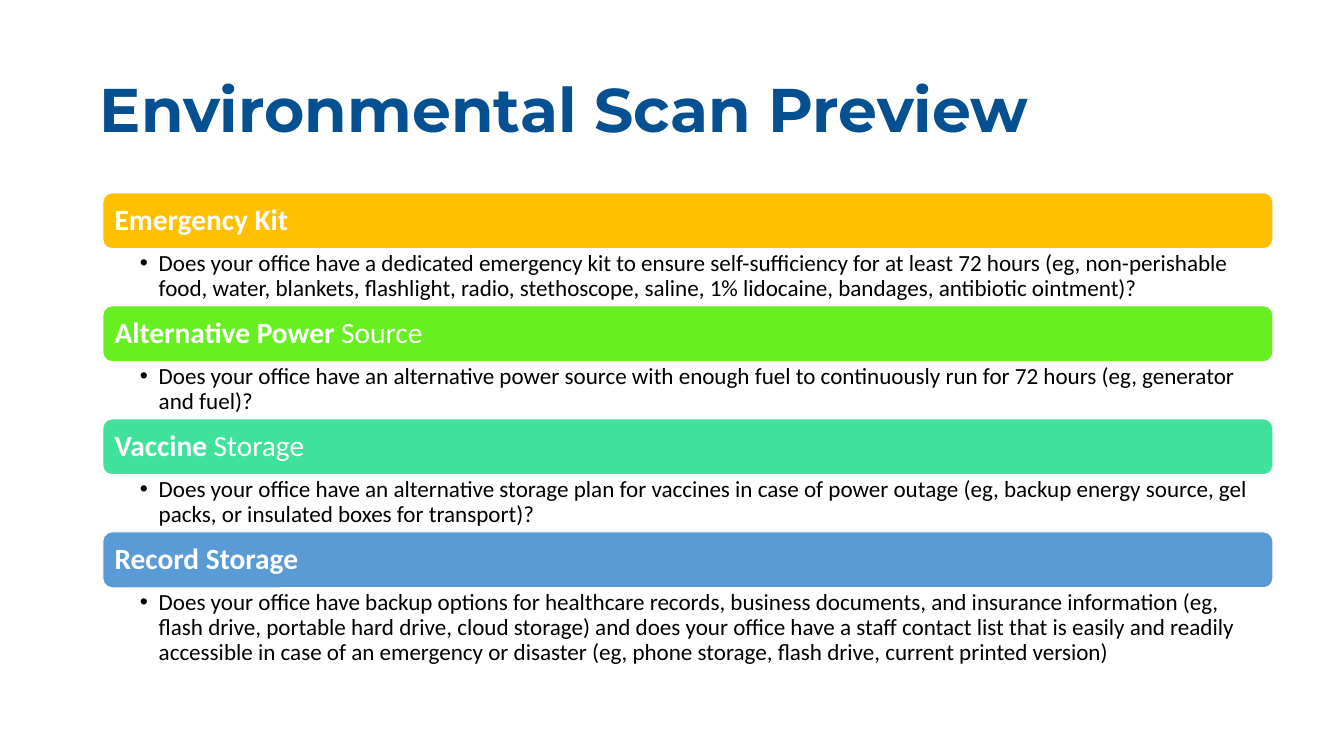
from lxml.etree import SubElement
from pptx import Presentation
from pptx.dml.color import RGBColor
from pptx.enum.shapes import MSO_SHAPE
from pptx.enum.text import MSO_ANCHOR, PP_ALIGN
from pptx.oxml.ns import qn
from pptx.util import Inches, Pt

NAVY = RGBColor(0x04, 0x50, 0x91)
WHITE = RGBColor(0xFF, 0xFF, 0xFF)
BLACK = RGBColor(0x00, 0x00, 0x00)
AMBER = RGBColor(0xFF, 0xC0, 0x00)
LIME = RGBColor(0x67, 0xEF, 0x21)
MINT = RGBColor(0x3F, 0xE1, 0x9B)
BLUE = RGBColor(0x5B, 0x9B, 0xD5)

TITLE = "Environmental Scan Preview"
SECTIONS = [
    (AMBER, [("Emergency Kit", True)],
     "Does your office have a dedicated emergency kit to ensure self-sufficiency for at least 72 hours "
     "(eg, non-perishable food, water, blankets, flashlight, radio, stethoscope, saline, 1% lidocaine, "
     "bandages, antibiotic ointment)?"),
    (LIME, [("Alternative Power ", True), ("Source", False)],
     "Does your office have an alternative power source with enough fuel to continuously run for 72 hours "
     "(eg, generator and fuel)?"),
    (MINT, [("Vaccine ", True), ("Storage", False)],
     "Does your office have an alternative storage plan for vaccines in case of power outage "
     "(eg, backup energy source, gel packs, or insulated boxes for transport)?"),
    (BLUE, [("Record Storage", True)],
     "Does your office have backup options for healthcare records, business documents, and insurance information "
     "(eg, flash drive, portable hard drive, cloud storage) and does your office have a staff contact list "
     "that is easily and readily accessible in case of an emergency or disaster "
     "(eg, phone storage, flash drive, current printed version)"),
]

LEFT, TOP, WIDTH = 1.36, 2.55, 15.48
BAR_HEIGHT, QUESTION_HEIGHT = 0.74, 0.76
PITCH = 1.495


def set_insets(frame, left, top, right, bottom):
    frame.margin_left, frame.margin_top = Inches(left), Inches(top)
    frame.margin_right, frame.margin_bottom = Inches(right), Inches(bottom)
    frame.word_wrap = True


def add_run(paragraph, text, font_name, size, color, bold=False):
    run = paragraph.add_run()
    run.text = text
    run.font.name, run.font.size, run.font.bold = font_name, Pt(size), bold
    run.font.color.rgb = color


def add_bar(slide, top, color, heading):
    bar = slide.shapes.add_shape(MSO_SHAPE.ROUNDED_RECTANGLE, Inches(LEFT), Inches(top),
                                 Inches(WIDTH), Inches(BAR_HEIGHT))
    bar.shadow.inherit = False
    bar.fill.solid()
    bar.fill.fore_color.rgb = color
    bar.line.color.rgb = WHITE
    bar.line.width = Pt(1)
    frame = bar.text_frame
    set_insets(frame, 0.12, 0.12, 0.12, 0.12)
    frame.vertical_anchor = MSO_ANCHOR.MIDDLE
    paragraph = frame.paragraphs[0]
    paragraph.alignment = PP_ALIGN.LEFT
    paragraph.line_spacing = 0.9
    for text, bold in heading:
        add_run(paragraph, text, "Calibri", 28, WHITE, bold)


def add_question(slide, top, text):
    box = slide.shapes.add_textbox(Inches(LEFT), Inches(top), Inches(WIDTH), Inches(QUESTION_HEIGHT))
    set_insets(box.text_frame, 0.49, 0.04, 0.22, 0.04)
    paragraph = box.text_frame.paragraphs[0]
    paragraph.line_spacing = 0.9
    properties = paragraph._p.get_or_add_pPr()
    properties.set("marL", str(Inches(0.25)))
    properties.set("indent", str(Inches(-0.25)))
    SubElement(properties, qn("a:buFont")).set("typeface", "Arial")
    SubElement(properties, qn("a:buChar")).set("char", "•")
    add_run(paragraph, text, "Calibri", 22, BLACK)


def main():
    presentation = Presentation()
    presentation.slide_width, presentation.slide_height = Inches(17.78), Inches(10)
    slide = presentation.slides.add_slide(presentation.slide_layouts[5])

    title = slide.shapes.title
    title.left, title.top = Inches(1.22), Inches(0.53)
    title.width, title.height = Inches(15.33), Inches(1.93)
    title.text_frame.vertical_anchor = MSO_ANCHOR.MIDDLE
    paragraph = title.text_frame.paragraphs[0]
    paragraph.alignment = PP_ALIGN.LEFT
    paragraph.line_spacing = 0.9
    add_run(paragraph, TITLE, "Montserrat", 58.7, NAVY, True)

    for index, (color, heading, question) in enumerate(SECTIONS):
        top = TOP + index * PITCH
        add_bar(slide, top, color, heading)
        add_question(slide, top + BAR_HEIGHT, question)

    presentation.save("out.pptx")


if __name__ == "__main__":
    main()
